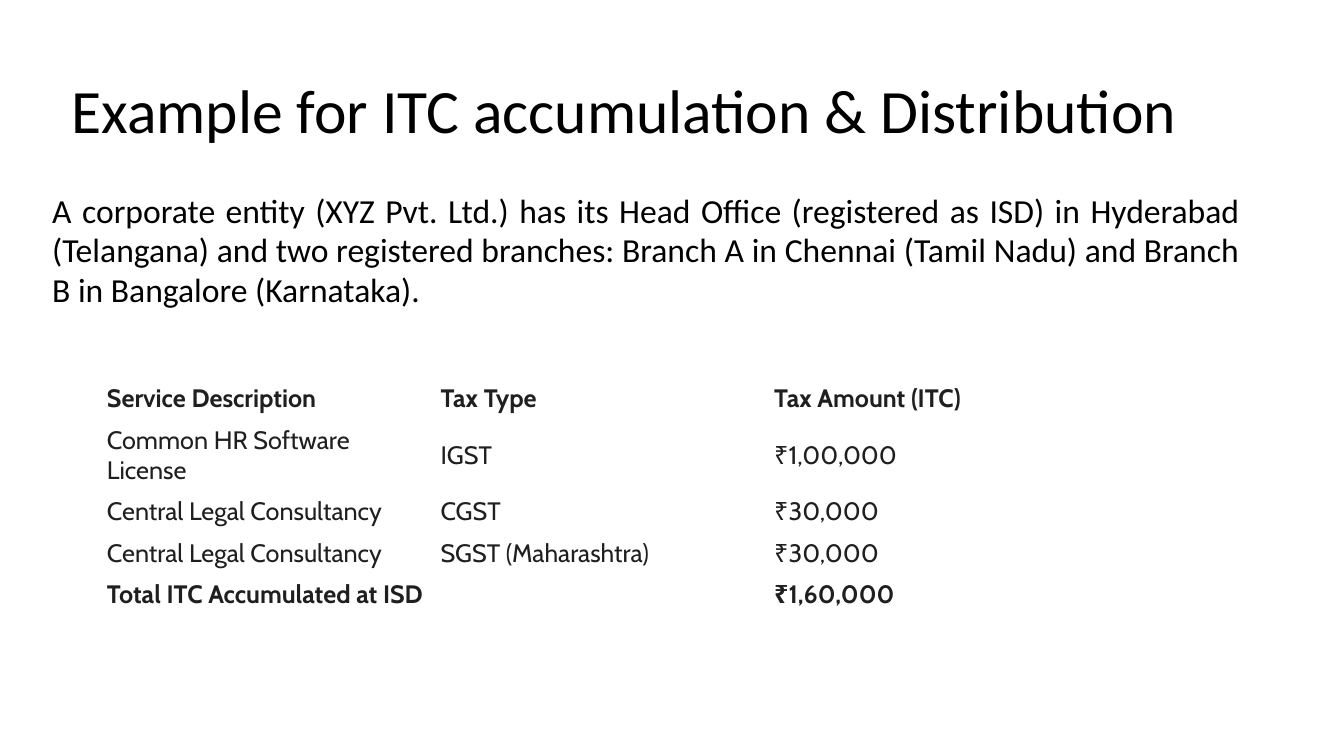
from lxml.etree import SubElement
from pptx import Presentation
from pptx.dml.color import RGBColor
from pptx.enum.text import MSO_ANCHOR, PP_ALIGN
from pptx.oxml.ns import qn
from pptx.util import Pt

TITLE = "Example for ITC accumulation & Distribution"
SCENARIO = (
    "A corporate entity (XYZ Pvt. Ltd.) has its Head Office (registered as ISD) "
    "in Hyderabad (Telangana) and two registered branches: Branch A in Chennai "
    "(Tamil Nadu) and Branch B in Bangalore (Karnataka)."
)
CREDITS = [
    ("Service Description", "Tax Type", "Tax Amount (ITC)"),
    ("Common HR Software License", "IGST", "₹1,00,000"),
    ("Central Legal Consultancy", "CGST", "₹30,000"),
    ("Central Legal Consultancy", "SGST (Maharashtra)", "₹30,000"),
    ("Total ITC Accumulated at ISD", "", "₹1,60,000"),
]
BOLD_ROWS = (0, len(CREDITS) - 1)

BLACK = RGBColor(0x00, 0x00, 0x00)
CHARCOAL = RGBColor(0x1F, 0x1F, 0x1F)
WHITE = RGBColor(0xFF, 0xFF, 0xFF)

TABLE_LEFT, TABLE_TOP = 70.6, 270
COLUMN_WIDTH, ROW_HEIGHT = 238.3, 29.6
CELL_INSET_X, CELL_INSET_Y = 5.8, 3.9


def style_runs(paragraph, font_name, size, color, bold=False):
    for run in paragraph.runs:
        run.font.name = font_name
        run.font.size = Pt(size)
        run.font.color.rgb = color
        run.font.bold = bold


def add_text(slide, box, text, size, anchor, alignment, line_spacing):
    shape = slide.shapes.add_textbox(*map(Pt, box))
    frame = shape.text_frame
    frame.word_wrap = True
    frame.vertical_anchor = anchor
    frame.text = text
    paragraph = frame.paragraphs[0]
    paragraph.alignment = alignment
    paragraph.line_spacing = line_spacing
    style_runs(paragraph, "Calibri", size, BLACK)


def add_borders(cell, color, width):
    """Draw all four cell edges; must run before the cell gets its fill."""
    properties = cell._tc.get_or_add_tcPr()
    for edge in ("a:lnL", "a:lnR", "a:lnT", "a:lnB"):
        line = SubElement(properties, qn(edge), w=str(Pt(width)))
        fill = SubElement(line, qn("a:solidFill"))
        SubElement(fill, qn("a:srgbClr"), val=str(color))


def add_credit_table(slide):
    row_count, column_count = len(CREDITS), len(CREDITS[0])
    frame = slide.shapes.add_table(
        row_count, column_count, Pt(TABLE_LEFT), Pt(TABLE_TOP),
        Pt(COLUMN_WIDTH * column_count), Pt(ROW_HEIGHT * row_count))
    table = frame.table
    table.first_row = False
    table.horz_banding = False
    for column in table.columns:
        column.width = Pt(COLUMN_WIDTH)
    for row_index, texts in enumerate(CREDITS):
        table.rows[row_index].height = Pt(ROW_HEIGHT)
        for column_index, text in enumerate(texts):
            cell = table.cell(row_index, column_index)
            add_borders(cell, WHITE, 0.5)
            cell.fill.background()
            cell.vertical_anchor = MSO_ANCHOR.MIDDLE
            cell.margin_left = cell.margin_right = Pt(CELL_INSET_X)
            cell.margin_top = cell.margin_bottom = Pt(CELL_INSET_Y)
            cell.text_frame.text = text
            style_runs(cell.text_frame.paragraphs[0], "Cabin", 18, CHARCOAL,
                       row_index in BOLD_ROWS)


def main():
    presentation = Presentation()
    presentation.slide_width, presentation.slide_height = Pt(960), Pt(540)
    slide = presentation.slides.add_slide(presentation.slide_layouts[6])
    add_text(slide, (44, 28.8, 877.7, 104.4), TITLE, 44,
             MSO_ANCHOR.MIDDLE, PP_ALIGN.LEFT, 0.9)
    add_text(slide, (30.2, 133.2, 862.6, 123.8), SCENARIO, 24,
             MSO_ANCHOR.TOP, PP_ALIGN.JUSTIFY, 0.98)
    add_credit_table(slide)
    presentation.save("out.pptx")


if __name__ == "__main__":
    main()
